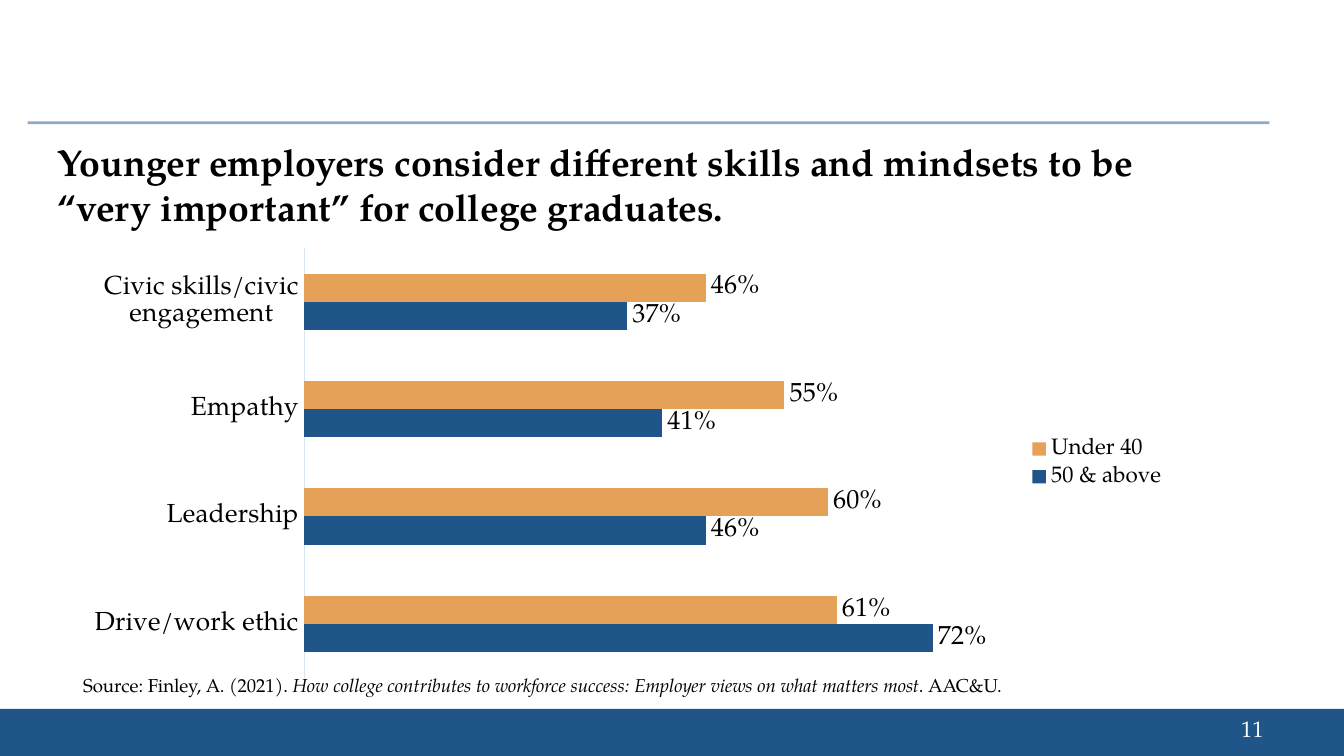
"""Build a slide comparing the skills younger and older employers call very important."""
from dataclasses import dataclass

from lxml.etree import SubElement
from pptx import Presentation
from pptx.chart.data import CategoryChartData
from pptx.dml.color import RGBColor
from pptx.enum.chart import XL_CHART_TYPE, XL_LABEL_POSITION, XL_LEGEND_POSITION, XL_TICK_MARK
from pptx.enum.shapes import MSO_CONNECTOR, MSO_SHAPE
from pptx.enum.text import MSO_ANCHOR, PP_ALIGN
from pptx.oxml import parse_xml
from pptx.oxml.ns import nsdecls, qn
from pptx.util import Cm, Pt


@dataclass(frozen=True)
class Theme:
    face: str = "TeX Gyre Pagella"
    blue: RGBColor = RGBColor(0x20, 0x55, 0x8A)
    orange: RGBColor = RGBColor(0xE6, 0xA1, 0x58)
    pale: RGBColor = RGBColor(0xD6, 0xE5, 0xF5)
    black: RGBColor = RGBColor(0, 0, 0)
    white: RGBColor = RGBColor(0xFF, 0xFF, 0xFF)
    headline: int = 20
    label: int = 14
    legend: int = 12
    number: int = 12
    source: int = 10


theme = Theme()


def style(font, size, color=theme.black):
    font.name = theme.face
    font.size = Pt(size)
    font.color.rgb = color


def add_text(left, top, width, height, runs, size, color=theme.black):
    frame = slide.shapes.add_textbox(Cm(left), Cm(top), Cm(width), Cm(height)).text_frame
    frame.word_wrap = True
    for words, bold, italic in runs:
        run = frame.paragraphs[0].add_run()
        run.text = words
        style(run.font, size, color)
        run.font.bold = bold
        run.font.italic = italic
    return frame


deck = Presentation()
deck.slide_width, deck.slide_height = Cm(25.4), Cm(14.29)
slide = deck.slides.add_slide(deck.slide_layouts[6])

footer = slide.shapes.add_shape(MSO_SHAPE.RECTANGLE, Cm(0), Cm(13.4), Cm(25.4), Cm(0.89))
footer.shadow.inherit = False
footer.fill.solid()
footer.fill.fore_color.rgb = theme.blue
footer.line.fill.background()

rule = slide.shapes.add_connector(MSO_CONNECTOR.STRAIGHT, Cm(0.52), Cm(2.32), Cm(23.99), Cm(2.32))
rule.line.color.rgb = theme.blue
rule.line.width = Pt(1.5)
rule_color = rule.line.fill.fore_color
rule_properties = rule._element.spPr
SubElement(next(rule_properties.iter(qn("a:srgbClr"))), qn("a:alpha"), val="50000")
SubElement(rule_properties, qn("a:effectLst"))

page_number = add_text(18.21, 13.39, 5.92, 0.76, [("11", False, False)], theme.number, theme.white)
page_number.vertical_anchor = MSO_ANCHOR.MIDDLE
page_number.paragraphs[0].alignment = PP_ALIGN.RIGHT

importance = CategoryChartData(number_format="0%")
importance.categories = ["Drive/work ethic", "Leadership", "Empathy", "Civic skills/civic engagement"]
importance.add_series("50 & above", (0.72, 0.46, 0.41, 0.37))
importance.add_series("Under 40", (0.61, 0.60, 0.55, 0.46))
chart = slide.shapes.add_chart(
    XL_CHART_TYPE.BAR_CLUSTERED, Cm(1.35), Cm(4.52), Cm(20.95), Cm(8.46), importance
).chart
style(chart.font, theme.source, theme.blue)
chart.has_title = False
chart.has_legend = True
chart.legend.position = XL_LEGEND_POSITION.RIGHT
chart.legend.include_in_layout = False
style(chart.legend.font, theme.legend)

skills = chart.category_axis
skills.major_tick_mark = skills.minor_tick_mark = XL_TICK_MARK.NONE
skills.format.line.color.rgb = theme.pale
skills.format.line.width = Pt(0.75)
style(skills.tick_labels.font, theme.label)

shares = chart.value_axis
shares.visible = False
shares.has_major_gridlines = False
shares.minimum_scale, shares.maximum_scale = 0, 0.8

bars = chart.plots[0]
bars.gap_width = 182
bars.overlap = 0
bars.vary_by_categories = False
for age_group, color in zip(bars.series, (theme.blue, theme.orange)):
    age_group.format.fill.solid()
    age_group.format.fill.fore_color.rgb = color
    labels = age_group.data_labels
    labels.show_value = True
    labels.number_format = "0%"
    labels.number_format_is_linked = False
    labels.position = XL_LABEL_POSITION.OUTSIDE_END
    style(labels.font, theme.label)

plot_area = chart._chartSpace.chart.plotArea
for automatic in plot_area.findall(qn("c:layout")):
    plot_area.remove(automatic)
plot_area.insert(0, parse_xml(
    f'<c:layout {nsdecls("c")}><c:manualLayout><c:layoutTarget val="inner"/>'
    '<c:xMode val="edge"/><c:yMode val="edge"/>'
    '<c:x val="0.21"/><c:y val="0.02"/><c:w val="0.63"/><c:h val="0.96"/>'
    '</c:manualLayout></c:layout>'
))

add_text(0.84, 2.51, 22.61, 1.96, [
    ("Younger employers consider different skills and mindsets to be “very important” for college graduates.", True, False),
], theme.headline)
add_text(1.32, 12.62, 21.64, 0.69, [
    ("Source: Finley, A. (2021). ", False, False),
    ("How college contributes to workforce success: Employer views on what matters most", False, True),
    (". AAC&U.", False, False),
], theme.source)

deck.save("out.pptx")
